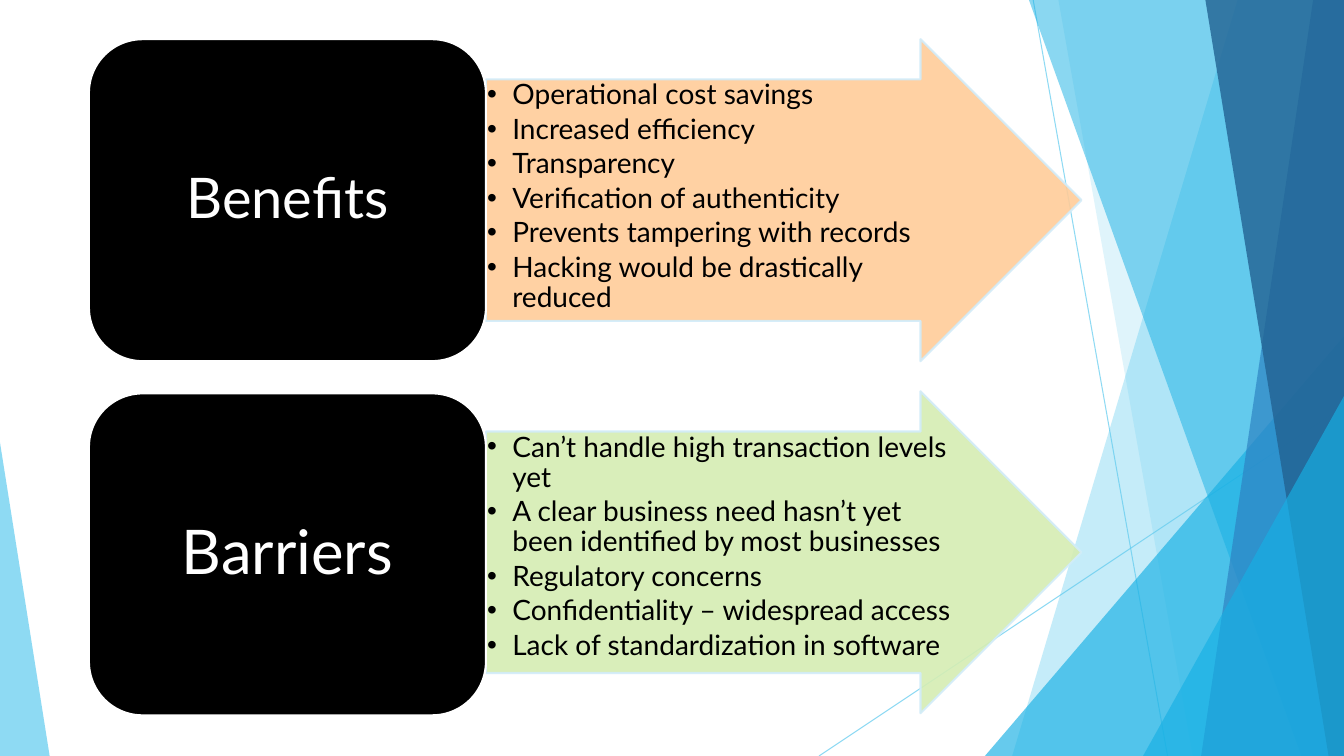
from lxml.etree import SubElement
from pptx import Presentation
from pptx.dml.color import RGBColor
from pptx.enum.shapes import MSO_CONNECTOR, MSO_SHAPE
from pptx.enum.text import MSO_ANCHOR, PP_ALIGN
from pptx.oxml.ns import qn
from pptx.util import Pt

PAGE_WIDTH, PAGE_HEIGHT = 960, 540
FONT = "Lato"
BLACK = RGBColor(0x00, 0x00, 0x00)
WHITE = RGBColor(0xFF, 0xFF, 0xFF)
SKY = RGBColor(0x5F, 0xCB, 0xEF)
CYAN = RGBColor(0x17, 0xB0, 0xE4)
BLUE = RGBColor(0x2E, 0x83, 0xC3)
NAVY = RGBColor(0x22, 0x62, 0x92)
PEACH = RGBColor(0xFF, 0xCC, 0x99)
LIME = RGBColor(0xD5, 0xED, 0xB3)
PALE_BLUE = RGBColor(0xD2, 0xEC, 0xF9)

BENEFITS = [
    "Operational cost savings",
    "Increased efficiency",
    "Transparency",
    "Verification of authenticity",
    "Prevents tampering with records",
    "Hacking would be drastically reduced",
]
BARRIERS = [
    "Can’t handle high transaction levels yet",
    "A clear business need hasn’t yet been identified by most businesses",
    "Regulatory concerns",
    "Confidentiality – widespread access",
    "Lack of standardization in software",
]


def set_opacity(shape, percent):
    """Give every colour of the shape the same opacity."""
    for color in shape.element.xpath(".//a:srgbClr"):
        SubElement(color, qn("a:alpha"), val=str(percent * 1000))


def paint(shape, color, opacity=100, outline=None):
    """Fill the shape, outline it if asked, and remove its shadow."""
    shape.shadow.inherit = False
    shape.fill.solid()
    shape.fill.fore_color.rgb = color
    if outline is None:
        shape.line.fill.background()
    else:
        shape.line.color.rgb = outline
        shape.line.width = Pt(1.5)
    if opacity < 100:
        set_opacity(shape, opacity)


def add_ray(page, start, end):
    """Draw a thin translucent line between two points."""
    ray = page.shapes.add_connector(
        MSO_CONNECTOR.STRAIGHT, *(Pt(length) for length in start + end))
    ray.line.color.rgb = SKY
    ray.line.width = Pt(0.75)
    SubElement(ray.element.spPr, qn("a:effectLst"))
    set_opacity(ray, 70)


def add_pane(page, top_left, bottom_left, color, opacity):
    """Draw a full-height pane with a slanted left edge, reaching the right edge."""
    builder = page.shapes.build_freeform(Pt(top_left), 0)
    corners = [(PAGE_WIDTH, 0), (PAGE_WIDTH, PAGE_HEIGHT), (bottom_left, PAGE_HEIGHT)]
    builder.add_line_segments([(Pt(x), Pt(y)) for x, y in corners])
    paint(builder.convert_to_shape(), color, opacity)


def add_wedge(page, left, top, width, apex, color, opacity):
    """Draw a right triangle standing on the bottom edge."""
    wedge = page.shapes.add_shape(
        MSO_SHAPE.ISOSCELES_TRIANGLE,
        Pt(left), Pt(top), Pt(width), Pt(PAGE_HEIGHT - top))
    wedge.adjustments[0] = apex
    paint(wedge, color, opacity)


def add_backdrop(page):
    """Layer the translucent facets along the page edges."""
    add_ray(page, (738, 0), (834, PAGE_HEIGHT))
    add_ray(page, (PAGE_WIDTH, 290), (585, PAGE_HEIGHT))
    add_pane(page, 884, 723, SKY, 36)
    add_pane(page, 756, 852, SKY, 20)
    add_wedge(page, 703.5, 240, 256.5, 1, CYAN, 66)
    add_pane(page, 735, 929.5, CYAN, 50)
    add_pane(page, 938, 858, BLUE, 70)
    add_pane(page, 861, 949, NAVY, 80)
    add_wedge(page, 816.5, 283, 143.5, 1, CYAN, 66)
    add_wedge(page, 0, 316, 35.5, 0, SKY, 70)


def style_paragraph(para, size, color):
    """Format the paragraph's spacing and runs."""
    para.line_spacing = 0.9
    for span in para.runs:
        span.font.name = FONT
        span.font.size = Pt(size)
        span.font.color.rgb = color


def add_bullets(page, left, top, width, height, points):
    """Write a bulleted list in the given box."""
    box = page.shapes.add_textbox(Pt(left), Pt(top), Pt(width), Pt(height))
    frame = box.text_frame
    frame.word_wrap = True
    frame.margin_left = frame.margin_right = Pt(0.9)
    frame.margin_top = frame.margin_bottom = Pt(0.9)
    frame.text = "\n".join(points)
    for para in frame.paragraphs:
        para.level = 1
        para.space_after = Pt(3)
        style_paragraph(para, 20, BLACK)
        properties = para._p.get_or_add_pPr()
        properties.set("marL", str(Pt(18)))
        properties.set("indent", str(-Pt(18)))
        SubElement(properties, qn("a:buFont"), typeface="Arial")
        SubElement(properties, qn("a:buChar"), char="•")


def add_arrow(page, left, top, width, height, color, points):
    """Draw a block arrow with a list on its shaft."""
    arrow = page.shapes.add_shape(
        MSO_SHAPE.RIGHT_ARROW, Pt(left), Pt(top), Pt(width), Pt(height))
    arrow.adjustments[0] = 0.75
    arrow.adjustments[1] = 0.5
    paint(arrow, color, 90, PALE_BLUE)
    add_bullets(page, left, top + height / 8, width * 0.8, height * 0.75, points)


def add_label(page, left, top, width, height, heading, size):
    """Draw a rounded black label with a centred heading."""
    label = page.shapes.add_shape(
        MSO_SHAPE.ROUNDED_RECTANGLE, Pt(left), Pt(top), Pt(width), Pt(height))
    paint(label, BLACK, outline=WHITE)
    frame = label.text_frame
    frame.word_wrap = True
    frame.vertical_anchor = MSO_ANCHOR.MIDDLE
    frame.text = heading
    para = frame.paragraphs[0]
    para.alignment = PP_ALIGN.CENTER
    style_paragraph(para, size, WHITE)


def add_comparison(page, left, width, height):
    """Place the two labelled arrows, one below the other."""
    label_width = width * 0.4
    rows = [
        ("Benefits", 40, PEACH, BENEFITS, 28, 28),
        ("Barriers", 44, LIME, BARRIERS, 279.5, 281),
    ]
    for heading, size, color, points, arrow_top, label_top in rows:
        add_arrow(page, left + label_width, arrow_top,
                  width - label_width, height, color, points)
        add_label(page, left, label_top, label_width, height, heading, size)


def main():
    """Build the slide and save it."""
    deck = Presentation()
    deck.slide_width, deck.slide_height = Pt(PAGE_WIDTH), Pt(PAGE_HEIGHT)
    page = deck.slides.add_slide(deck.slide_layouts[6])
    add_backdrop(page)
    add_comparison(page, 63.5, 709, 230)
    deck.save("out.pptx")


if __name__ == "__main__":
    main()
